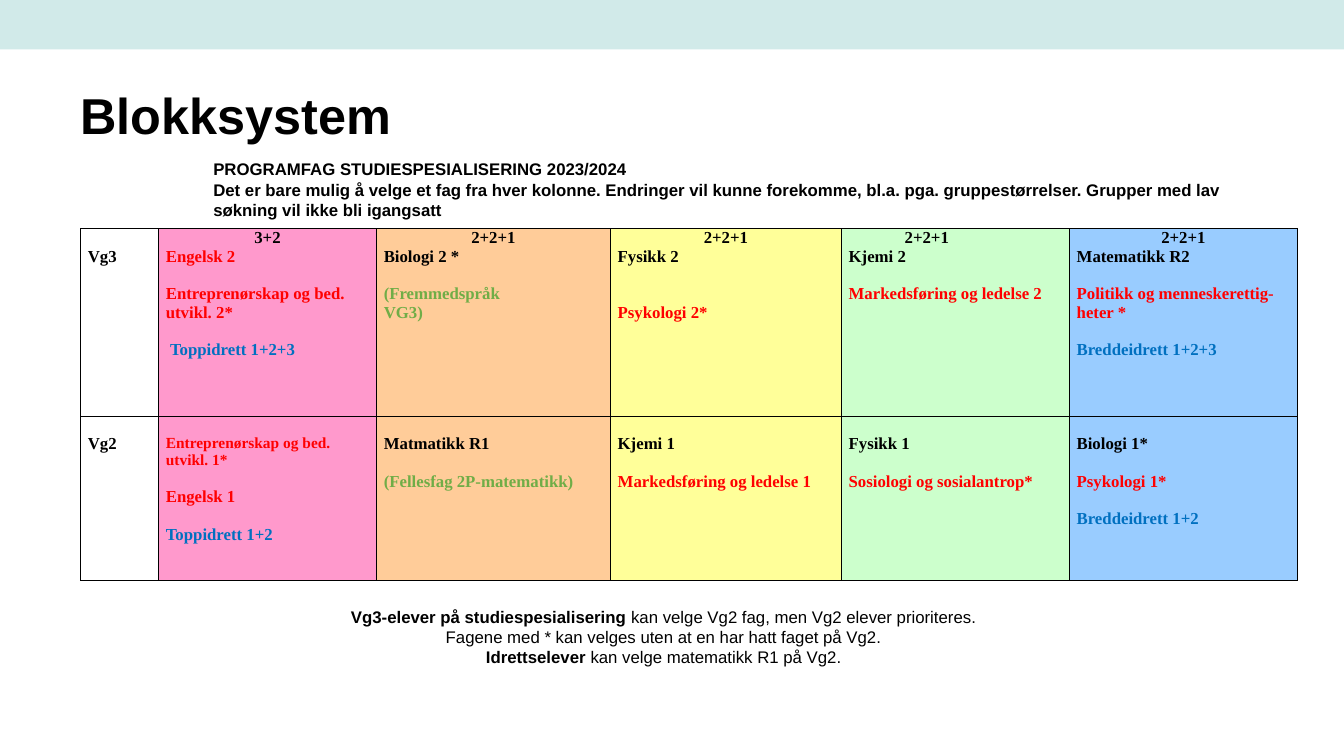
from lxml import etree
from pptx import Presentation
from pptx import util as u
from pptx.dml.color import RGBColor
from pptx.enum import shapes, text
from pptx.oxml import ns

COLORS = {
    "black": "000000", "red": "FF0000", "blue": "0070C0", "green": "70AD47",
    "band": "D1EAE9", "white": "FFFFFF", "pink": "FF99CC", "orange": "FFCC99",
    "yellow": "FFFF99", "mint": "CCFFCC", "sky": "99CCFF",
}
LINE = 13.3
COLUMNS = [(55.7, "white"), (155.7, "pink"), (167.1, "orange"),
           (165, "yellow"), (162.9, "mint"), (162.9, "sky")]
ROW_HEIGHTS = [134, 117.5]
CENTERED = {"align": text.PP_ALIGN.CENTER}
HEADINGS = [
    None, ("3+2", CENTERED), ("2+2+1", CENTERED), ("2+2+1", CENTERED),
    ("2+2+1", {"left": 40}), ("2+2+1", CENTERED),
]
VG3 = [
    [("Vg3", "black", {})],
    [("Engelsk 2", "red", {}),
     ("Entreprenørskap og bed. utvikl. 2*", "red", {"before": LINE}),
     ("Toppidrett 1+2+3", "blue", {"before": LINE, "left": 3})],
    [("Biologi 2 *", "black", {}),
     ("(Fremmedspråk", "green", {"before": LINE}), ("VG3)", "green", {})],
    [("Fysikk 2", "black", {}), ("Psykologi 2*", "red", {"before": 2 * LINE})],
    [("Kjemi 2", "black", {}), ("Markedsføring og ledelse 2", "red", {"before": LINE})],
    [("Matematikk R2", "black", {}),
     ("Politikk og menneskerettig-heter *", "red", {"before": LINE}),
     ("Breddeidrett 1+2+3", "blue", {"before": LINE})],
]
VG2 = [
    [("Vg2", "black", {})],
    [("Entreprenørskap og bed. utvikl. 1*", "red", {"size": 11}),
     ("Engelsk 1", "red", {"before": LINE}),
     ("Toppidrett 1+2", "blue", {"before": LINE})],
    [("Matmatikk R1", "black", {}),
     ("(Fellesfag 2P-matematikk)", "green", {"before": LINE})],
    [("Kjemi 1", "black", {}), ("Markedsføring og ledelse 1", "red", {"before": LINE})],
    [("Fysikk 1", "black", {}), ("Sosiologi og sosialantrop*", "red", {"before": LINE})],
    [("Biologi 1*", "black", {}), ("Psykologi 1*", "red", {"before": LINE}),
     ("Breddeidrett 1+2", "blue", {"before": LINE})],
]
INTRO = [
    "PROGRAMFAG STUDIESPESIALISERING 2023/2024",
    "Det er bare mulig å velge et fag fra hver kolonne. Endringer vil kunne forekomme, "
    "bl.a. pga. gruppestørrelser. Grupper med lav",
    "søkning vil ikke bli igangsatt",
]
NOTES = [
    [("Vg3-elever på studiespesialisering ", True),
     ("kan velge Vg2 fag, men Vg2 elever prioriteres.", False)],
    [("Fagene med * kan velges uten at en har hatt faget på Vg2.", False)],
    [("Idrettselever ", True), ("kan velge matematikk R1 på Vg2.", False)],
]


def rgb(name):
    """Return the named colour."""
    return RGBColor.from_string(COLORS[name])


def write(frame, content, font="Arial", size=12, color="black", bold=True,
          align=text.PP_ALIGN.LEFT, before=0, left=0, indent=0):
    """Add one paragraph, given as a string or as (text, bold) runs."""
    paragraph = frame.paragraphs[0]
    if paragraph.runs:
        paragraph = frame.add_paragraph()
    paragraph.alignment = align
    if before:
        paragraph.space_before = u.Pt(before)
    properties = paragraph._p.get_or_add_pPr()
    properties.set("marL", str(u.Pt(left)))
    properties.set("indent", str(u.Pt(indent)))
    for words, weight in [(content, bold)] if isinstance(content, str) else content:
        run = paragraph.add_run()
        run.text = words
        run.font.name = font
        run.font.size = u.Pt(size)
        run.font.bold = weight
        run.font.color.rgb = rgb(color)


def add_text_frame(slide, box, margins=(7.2, 3.6), anchor=text.MSO_ANCHOR.TOP):
    """Add a wrapping text box and return its text frame."""
    frame = slide.shapes.add_textbox(*map(u.Pt, box)).text_frame
    frame.word_wrap = True
    frame.vertical_anchor = anchor
    frame.margin_left = frame.margin_right = u.Pt(margins[0])
    frame.margin_top = frame.margin_bottom = u.Pt(margins[1])
    return frame


def add_band(slide, box):
    """Draw the coloured band along the top edge."""
    shape = slide.shapes.add_shape(shapes.MSO_SHAPE.RECTANGLE, *map(u.Pt, box))
    shape.shadow.inherit = False
    shape.fill.solid()
    shape.fill.fore_color.rgb = rgb("band")
    shape.line.fill.background()


def add_title(slide, box):
    """Write the slide title."""
    write(add_text_frame(slide, box, margins=(0, 0)), "Blokksystem", size=36)


def add_intro(slide, box):
    """Write the introduction above the table."""
    frame = add_text_frame(slide, box, anchor=text.MSO_ANCHOR.MIDDLE)
    for line in INTRO:
        write(frame, line, indent=35.3)


def add_notes(slide, box):
    """Write the centred remarks below the table."""
    frame = add_text_frame(slide, box)
    for runs in NOTES:
        write(frame, runs, align=text.PP_ALIGN.CENTER, indent=35.3)


def style_cell(cell, fill):
    """Give a cell its borders, margins and fill."""
    properties = cell._tc.get_or_add_tcPr()
    for side in ("lnL", "lnR", "lnT", "lnB"):
        line = etree.SubElement(properties, ns.qn(f"a:{side}"), w=str(u.Pt(1)))
        solid = etree.SubElement(line, ns.qn("a:solidFill"))
        etree.SubElement(solid, ns.qn("a:srgbClr"), val=COLORS["black"])
    cell.fill.solid()
    cell.fill.fore_color.rgb = rgb(fill)
    cell.margin_left = cell.margin_right = u.Pt(5.2)
    cell.margin_top = cell.margin_bottom = 0


def write_cell(cell, heading, subjects):
    """Write the optional hours heading and the subjects of a block."""
    if heading:
        hours, options = heading
        write(cell.text_frame, hours, font="Times New Roman", **options)
    else:
        cell.margin_top = u.Pt(LINE)
    for words, color, options in subjects:
        write(cell.text_frame, words, font="Times New Roman", color=color, **options)


def add_blocks(slide, box):
    """Build the table of subject blocks."""
    table = slide.shapes.add_table(2, len(COLUMNS), *map(u.Pt, box)).table
    table.first_row = table.horz_banding = False
    for column, (width, _) in zip(table.columns, COLUMNS):
        column.width = u.Pt(width)
    levels = [(HEADINGS, VG3), ([None] * len(COLUMNS), VG2)]
    for row, height, (headings, blocks) in zip(table.rows, ROW_HEIGHTS, levels):
        row.height = u.Pt(height)
        for cell, (_, fill), heading, subjects in zip(row.cells, COLUMNS, headings, blocks):
            style_cell(cell, fill)
            write_cell(cell, heading, subjects)


def main():
    """Build and save the slide."""
    presentation = Presentation()
    presentation.slide_width, presentation.slide_height = u.Pt(960), u.Pt(540)
    slide = presentation.slides.add_slide(presentation.slide_layouts[6])
    add_band(slide, (0, 0, 960, 35.3))
    add_title(slide, (57.5, 60.2, 801, 42))
    add_blocks(slide, (57.6, 163.4, sum(width for width, _ in COLUMNS), sum(ROW_HEIGHTS)))
    add_intro(slide, (110, 109.7, 781, 51))
    add_notes(slide, (131.8, 429.5, 649.4, 52))
    presentation.save("out.pptx")


if __name__ == "__main__":
    main()
